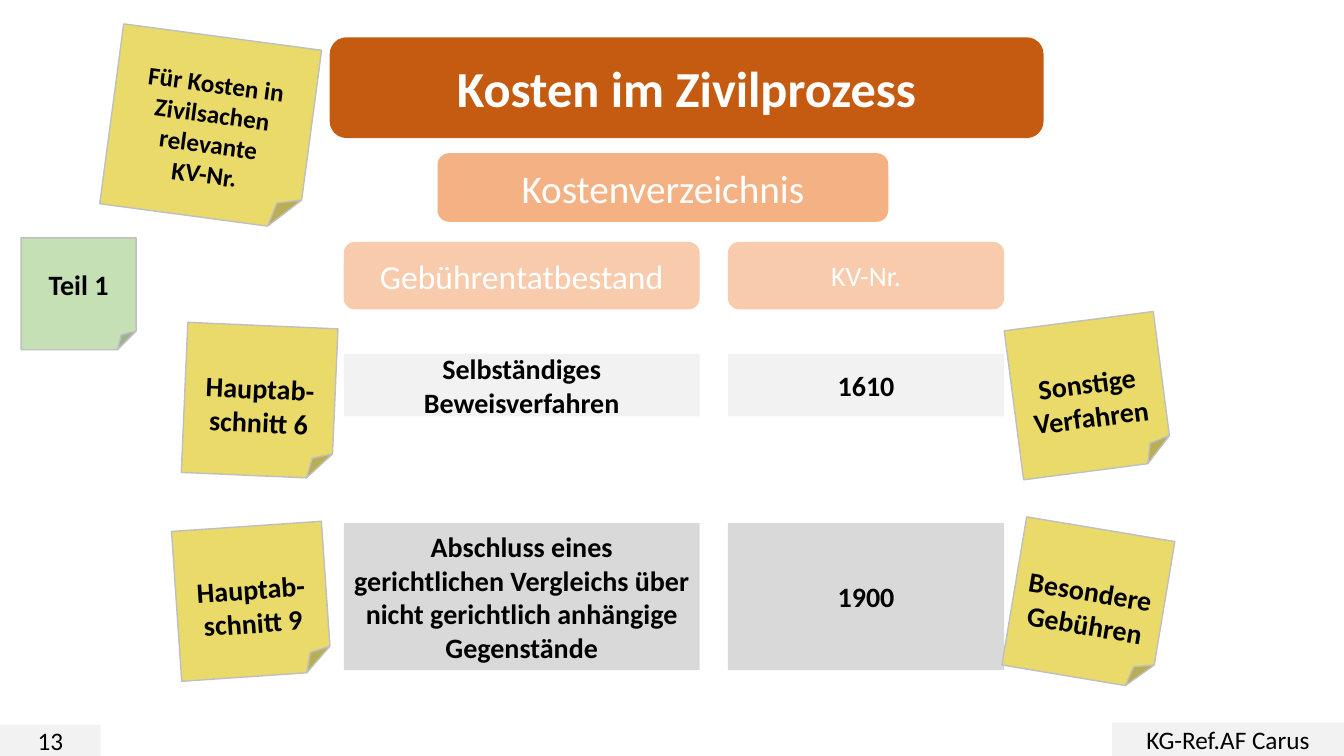
import dataclasses

import pptx
import pptx.dml.color
import pptx.enum.shapes
import pptx.enum.text
import pptx.util

Inches = pptx.util.Inches
KIND = pptx.enum.shapes.MSO_SHAPE


@dataclasses.dataclass(frozen=True)
class Theme:
    """Hold the colours, font and type sizes of the slide."""
    font: str = "Calibri"
    white: str = "FFFFFF"
    black: str = "000000"
    rust: str = "C55A11"
    peach: str = "F4B183"
    pale: str = "F8CBAD"
    light: str = "F2F2F2"
    grey: str = "D9D9D9"
    edge: str = "BFBFBF"
    yellow: str = "E9DA69"
    green: str = "C5E0B4"
    title: int = 36
    head: int = 28
    label: int = 24
    body: int = 20
    small: int = 18


THEME = Theme()


def color(code):
    """Turn a hex code into a colour."""
    return pptx.dml.color.RGBColor.from_string(code)


def write(shape, text, size=THEME.body, ink=THEME.black, bold=False, drop=0):
    """Write centred text, pushed down by an extra top inset."""
    frame = shape.text_frame
    frame.text = text
    frame.word_wrap = True
    frame.auto_size = pptx.enum.text.MSO_AUTO_SIZE.NONE
    frame.vertical_anchor = pptx.enum.text.MSO_ANCHOR.MIDDLE
    frame.margin_top = Inches(0.05 + drop)
    for line in frame.paragraphs:
        line.alignment = pptx.enum.text.PP_ALIGN.CENTER
        for run in line.runs:
            run.font.name = THEME.font
            run.font.size = pptx.util.Pt(size)
            run.font.bold = bold
            run.font.color.rgb = color(ink)


def place(shape, box):
    """Move and size a shape."""
    shape.left, shape.top, shape.width, shape.height = map(Inches, box)


def panel(slide, kind, box, fill):
    """Add a flat filled shape without an outline."""
    shape = slide.shapes.add_shape(kind, *map(Inches, box))
    shape.shadow.inherit = False
    shape.fill.solid()
    shape.fill.fore_color.rgb = color(fill)
    shape.line.fill.background()
    return shape


def pill(slide, box, fill, text, size):
    """Add a rounded heading with white text."""
    shape = panel(slide, KIND.ROUNDED_RECTANGLE, box, fill)
    write(shape, text, size=size, ink=THEME.white)


def cell(slide, box, fill, text, **style):
    """Add a plain box with black text."""
    write(panel(slide, KIND.RECTANGLE, box, fill), text, **style)


def note(slide, box, text, turn=0, fill=THEME.yellow, **style):
    """Add a sticky note with a folded corner."""
    shape = panel(slide, KIND.FOLDED_CORNER, box, fill)
    shape.line.color.rgb = color(THEME.edge)
    shape.line.width = pptx.util.Pt(1)
    shape.rotation = turn
    write(shape, text, bold=True, **style)


def banner(slide, box, text):
    """Set the title on a rounded bar."""
    bar = panel(slide, KIND.ROUNDED_RECTANGLE, box, THEME.rust)
    title = slide.shapes.title
    place(title, box)
    write(title, text, size=THEME.title, ink=THEME.white, bold=True)
    bar.element.addnext(title.element)


def main():
    """Build the slide and save it."""
    deck = pptx.Presentation()
    deck.slide_width, deck.slide_height = Inches(13.33), Inches(7.5)
    slide = deck.slides.add_slide(deck.slide_layouts[5])

    banner(slide, (3.27, 0.37, 7.08, 1), "Kosten im Zivilprozess")
    pill(slide, (4.34, 1.52, 4.47, 0.68), THEME.peach,
         "Kostenverzeichnis", THEME.head)

    cols = ((3.41, 3.53), (7.22, 2.74))
    heads = (("Gebührentatbestand", THEME.label), ("KV-Nr.", THEME.body))
    for (left, width), (text, size) in zip(cols, heads):
        pill(slide, (left, 2.4, width, 0.67), THEME.pale, text, size)

    rows = (
        (3.51, 0.62, THEME.light, ("Selbständiges Beweisverfahren", "1610")),
        (5.19, 1.46, THEME.grey,
         ("Abschluss eines gerichtlichen Vergleichs über "
          "nicht gerichtlich anhängige Gegenstände", "1900")),
    )
    for top, height, fill, texts in rows:
        for (left, width), text in zip(cols, texts):
            cell(slide, (left, top, width, height), fill, text, bold=True)

    note(slide, (1.1, 0.36, 1.98, 1.8),
         "Für Kosten in Zivilsachen relevante\nKV-Nr.",
         turn=7.6, size=THEME.small, drop=0.33)
    note(slide, (0.21, 2.36, 1.14, 1.11), "Teil 1", fill=THEME.green)
    notes = (
        (1.83, 3.23, 2.5, "Hauptab-\nschnitt 6"),
        (10.05, 3.18, -7.4, "Sonstige\nVerfahren"),
        (1.75, 5.22, -3.9, "Hauptab-\nschnitt 9"),
        (10.05, 5.24, 9.5, "Besondere\nGebühren"),
    )
    for left, top, turn, text in notes:
        note(slide, (left, top, 1.49, 1.49), text, turn=turn, drop=0.33)

    cell(slide, (0, 7.19, 1, 0.31), THEME.light, "13", size=THEME.small)
    cell(slide, (11.03, 7.17, 2.3, 0.33), THEME.light,
         "KG-Ref.AF Carus", size=THEME.small)
    deck.save("out.pptx")


if __name__ == "__main__":
    main()
